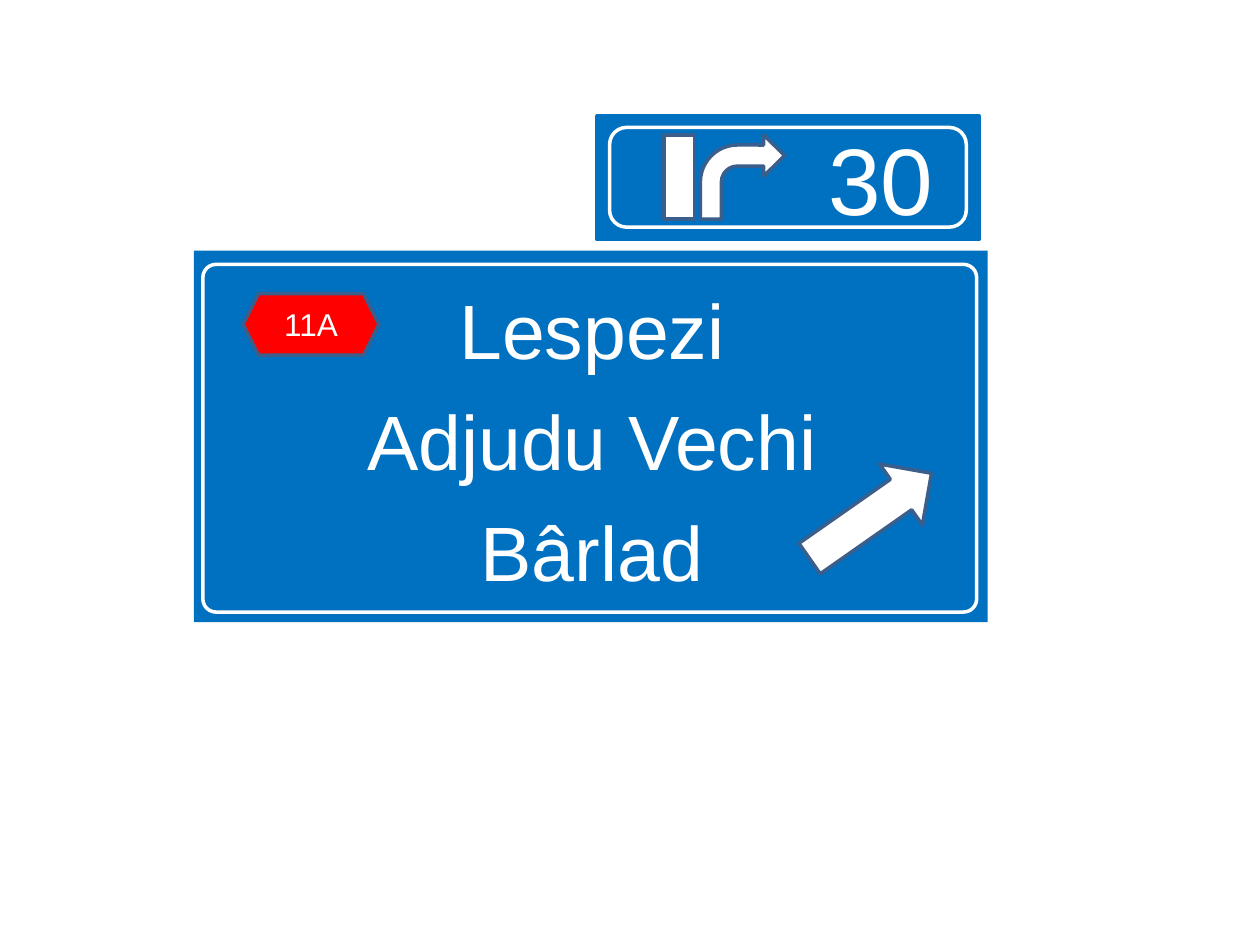
from pptx import Presentation
from pptx.dml.color import RGBColor
from pptx.enum.shapes import MSO_SHAPE
from pptx.enum.text import MSO_ANCHOR, MSO_AUTO_SIZE, PP_ALIGN
from pptx.util import Cm, Pt

COLORS = {"blue": "0070C0", "white": "FFFFFF", "red": "FF0000", "edge": "3A5F8C"}


def write_text(shape, *lines, size, insets=(0, 0, 0, 0), anchor=MSO_ANCHOR.MIDDLE,
               font="Arial", color="white", gap=0):
    """Fill a shape with centred lines, leaving a gap in points between them."""
    frame = shape.text_frame
    frame.word_wrap = True
    frame.auto_size = MSO_AUTO_SIZE.NONE
    frame.vertical_anchor = anchor
    (frame.margin_left, frame.margin_top,
     frame.margin_right, frame.margin_bottom) = map(Cm, insets)
    for index, line in enumerate(lines):
        para = frame.add_paragraph() if index else frame.paragraphs[0]
        para.alignment = PP_ALIGN.CENTER
        para.space_before = Pt(gap if index else 0)
        span = para.add_run()
        span.text = line
        span.font.name = font
        span.font.size = Pt(size)
        span.font.color.rgb = RGBColor.from_string(COLORS[color])


class RoadSign:
    line_width = Pt(2)

    def __init__(self, page):
        self.page = page

    def board(self, left, top, width, height, fill="blue"):
        """Use the subtitle as the main board and drop the unused title."""
        title = self.page.shapes.title.element
        title.getparent().remove(title)
        board = self.page.placeholders[1]
        board.left, board.top = Cm(left), Cm(top)
        board.width, board.height = Cm(width), Cm(height)
        board.fill.solid()
        board.fill.fore_color.rgb = RGBColor.from_string(COLORS[fill])
        return board

    def shape(self, kind, left, top, width, height, fill=None, line="edge",
              adjustments=(), rotation=0):
        shape = self.page.shapes.add_shape(
            kind, Cm(left), Cm(top), Cm(width), Cm(height))
        shape.shadow.inherit = False
        shape.rotation = rotation
        for index, value in enumerate(adjustments):
            shape.adjustments[index] = value
        if fill:
            shape.fill.solid()
            shape.fill.fore_color.rgb = RGBColor.from_string(COLORS[fill])
        else:
            shape.fill.background()
        shape.line.color.rgb = RGBColor.from_string(COLORS[line])
        shape.line.width = self.line_width
        return shape

    def border(self, left, top, width, height, corner):
        return self.shape(MSO_SHAPE.ROUNDED_RECTANGLE, left, top, width, height,
                          line="white", adjustments=[corner])


def main():
    deck = Presentation()
    deck.slide_width, deck.slide_height = Cm(25.4), Cm(19.05)
    sign = RoadSign(deck.slides.add_slide(deck.slide_layouts[0]))

    # Main board with destinations
    board = sign.board(3.91, 5.05, 16, 7.49)
    write_text(board, "Lespezi", "Adjudu Vechi", "Bârlad", size=44, gap=10.8,
               insets=(0.3, 0.64, 0.25, 0.3), anchor=MSO_ANCHOR.TOP)
    sign.shape(MSO_SHAPE.RIGHT_ARROW, 16.05, 9.65, 3, 1.5, fill="white", rotation=325)

    # Road number
    road = sign.shape(MSO_SHAPE.HEXAGON, 4.9, 5.92, 2.74, 1.24, fill="red")
    write_text(road, "11A", size=18)
    sign.border(4.09, 5.33, 15.6, 7.01, corner=0.038)

    # Exit plate
    plate = sign.shape(MSO_SHAPE.ROUNDED_RECTANGLE, 12.04, 2.34, 7.7, 2.49,
                       fill="blue", line="blue", adjustments=[0])
    write_text(plate, "30", size=54, insets=(3.99, 0.13, 0.25, 0.13))

    # Exit symbol: through lane and turning arrow
    sign.shape(MSO_SHAPE.RECTANGLE, 13.39, 2.72, 0.61, 1.7, fill="white")
    sign.border(12.29, 2.57, 7.19, 2.01, corner=0.17)
    sign.shape(MSO_SHAPE.BENT_ARROW, 14.12, 2.72, 1.7, 1.7, fill="white",
               adjustments=[0.25, 0.245, 0.25, 0.438])

    deck.save("out.pptx")


if __name__ == "__main__":
    main()
